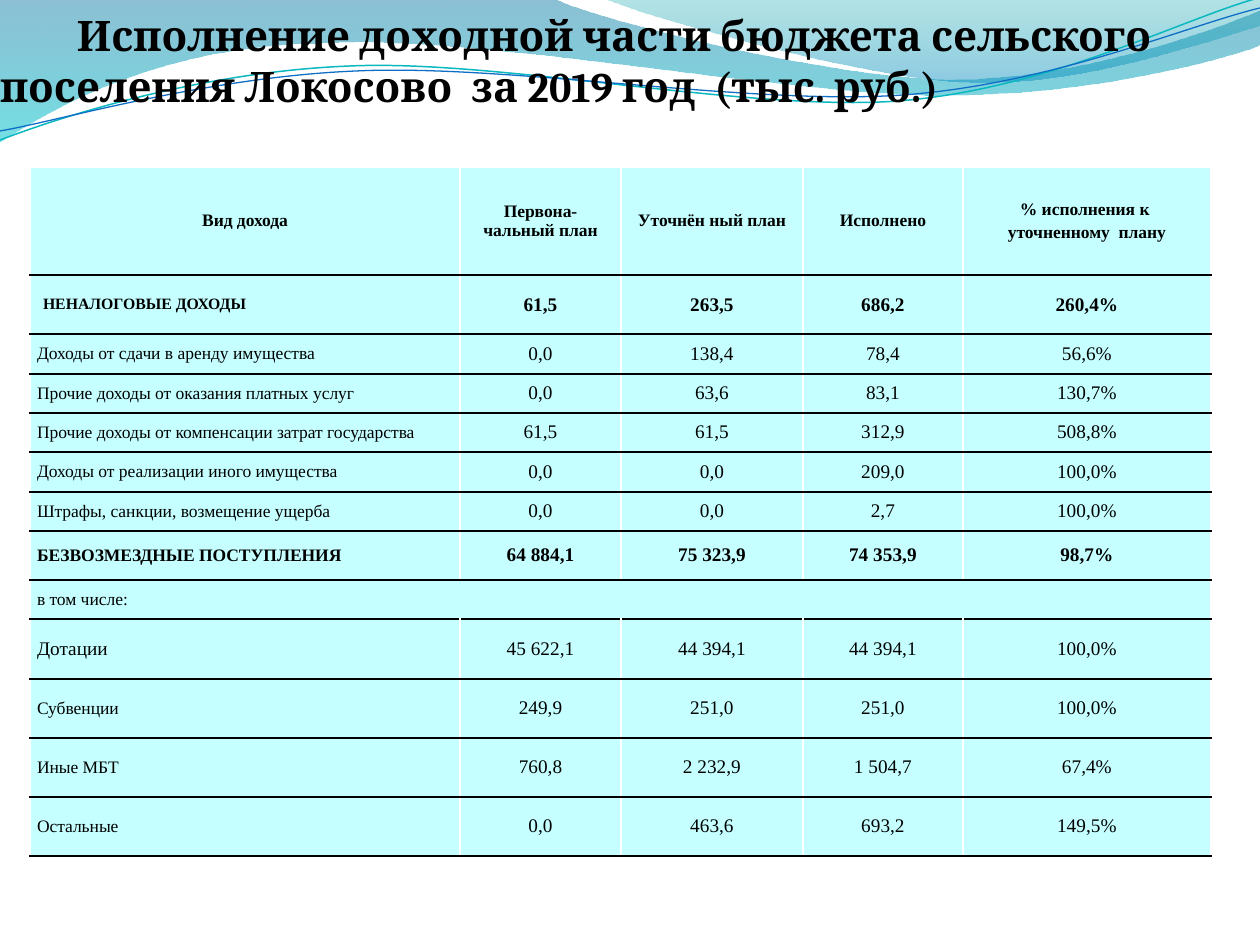
from dataclasses import dataclass

from lxml.etree import SubElement
from pptx import Presentation
from pptx.dml.color import RGBColor
from pptx.enum.text import MSO_ANCHOR, PP_ALIGN
from pptx.oxml.ns import qn
from pptx.util import Emu, Pt


@dataclass(frozen=True)
class Theme:
    black: str = "000000"
    white: str = "FFFFFF"
    cell: str = "C5FFFF"
    title_font: str = "Cambria"
    table_font: str = "Times New Roman"
    title_size: int = 24
    title_line: int = 29
    header_size: int = 10
    value_size: int = 11
    border: int = 1


THEME = Theme()
EMU_PER_PX = 914400 / 126

# Content
TITLE = "Исполнение доходной части бюджета сельского поселения Локосово  за 2019 год  (тыс. руб.)"
HEADERS = [["Вид дохода"], ["Первона-чальный план"], ["Уточнён ный план"], ["Исполнено"],
           ["% исполнения к ", "уточненному  плану"]]
# Height, label size, bold, label, values
ROWS = [
    (59, 9, True, "НЕНАЛОГОВЫЕ ДОХОДЫ", ["61,5", "263,5", "686,2", "260,4%"]),
    (40, 10, False, "Доходы от сдачи в аренду имущества", ["0,0", "138,4", "78,4", "56,6%"]),
    (39, 10, False, "Прочие доходы от оказания платных услуг", ["0,0", "63,6", "83,1", "130,7%"]),
    (39, 10, False, "Прочие доходы от компенсации затрат государства",
     ["61,5", "61,5", "312,9", "508,8%"]),
    (40, 10, False, "Доходы от реализации иного имущества", ["0,0", "0,0", "209,0", "100,0%"]),
    (39, 10, False, "Штрафы, санкции, возмещение ущерба", ["0,0", "0,0", "2,7", "100,0%"]),
    (49, 10, True, "БЕЗВОЗМЕЗДНЫЕ ПОСТУПЛЕНИЯ", ["64 884,1", "75 323,9", "74 353,9", "98,7%"]),
    (39, 10, False, "в том числе:", []),
    (60, 11, False, "Дотации", ["45 622,1", "44 394,1", "44 394,1", "100,0%"]),
    (59, 10, False, "Субвенции", ["249,9", "251,0", "251,0", "100,0%"]),
    (59, 10, False, "Иные МБТ", ["760,8", "2 232,9", "1 504,7", "67,4%"]),
    (59, 10, False, "Остальные", ["0,0", "463,6", "693,2", "149,5%"]),
]
HEADER_HEIGHT = 108
COLUMN_WIDTHS = [430, 161, 182, 160, 248]
TABLE_LEFT, TABLE_TOP = 30, 167
WIDE_INSET, NARROW_INSET = (13, 6), (7, 0)

# Waves: two numbers are a straight step, six are a Bezier curve
FILLED_WAVES = [
    ([(0, 0), (554, -1), (600, 21, 837, 79, 955, 79), (1075, 79, 1207, 33, 1260, 11),
      (1261, 45), (1239, 55, 1096, 96, 940, 95), (784, 95, 481, 35, 324, 43),
      (163, 45, 58, 105, -1, 142)], [("0074A1", 45), ("00C6CF", 55)]),
    ([(604, -1), (641, 15, 859, 78, 969, 82), (1079, 87, 1211, 40, 1260, 26), (1260, 0)],
     [("00A1A9", 30), ("008BBF", 45)]),
]
LINE_WAVES = [
    ([(0, 140), (60, 117, 199, 72, 349, 66), (498, 59, 747, 112, 898, 101),
      (1050, 89, 1182, 19, 1258, -2)], "0AB8BF", 0.85),
    ([(0, 131), (59, 121, 207, 77, 357, 71), (508, 64, 752, 106, 903, 95),
      (1053, 84, 1186, 26, 1260, 8)], "0F6FC6", 0.75),
]


def px(value):
    return Emu(round(value * EMU_PER_PX))


def color(value):
    return RGBColor.from_string(value)


def add_wave(slide, steps, closed):
    """Lay out every control point, then join each group of three into one curve."""
    points = [(px(step[i]), px(step[i + 1])) for step in steps for i in range(0, len(step), 2)]
    builder = slide.shapes.build_freeform(*points[0])
    builder.add_line_segments(points[1:], close=closed)
    shape = builder.convert_to_shape()
    shape.shadow.inherit = False
    segments = iter(list(shape.element.spPr.iter(qn("a:lnTo"))))
    for step in steps[1:]:
        group = [next(segments) for _ in range(len(step) // 2)]
        if len(group) == 3:
            curve = group[0].makeelement(qn("a:cubicBezTo"), {})
            group[0].addprevious(curve)
            for segment in group:
                curve.append(segment[0])
                segment.getparent().remove(segment)
    return shape


def add_filled_wave(slide, steps, stops):
    shape = add_wave(slide, steps, True)
    shape.line.fill.background()
    shape.fill.gradient()
    shape.fill.gradient_angle = 270
    for position, (stop, (value, _)) in enumerate(zip(shape.fill.gradient_stops, stops)):
        stop.color.rgb = color(value)
        stop.position = position
    for node, (_, opacity) in zip(shape.element.spPr.iter(qn("a:srgbClr")), stops):
        SubElement(node, qn("a:alpha"), val=str(opacity * 1000))


def add_line_wave(slide, steps, value, width):
    shape = add_wave(slide, steps, False)
    shape.fill.background()
    shape.line.color.rgb = color(value)
    shape.line.width = Pt(width)


def add_run(paragraph, text, font, size, bold):
    run = paragraph.add_run()
    run.text = text
    run.font.name = font
    run.font.size = Pt(size)
    run.font.bold = bold
    run.font.color.rgb = color(THEME.black)


def add_title(slide):
    frame = slide.shapes.add_textbox(px(0), px(20), px(1229), px(108)).text_frame
    frame.word_wrap = True
    frame.vertical_anchor = MSO_ANCHOR.BOTTOM
    frame.margin_left = frame.margin_right = 0
    frame.margin_top, frame.margin_bottom = px(6), px(17)
    paragraph = frame.paragraphs[0]
    paragraph.line_spacing = Pt(THEME.title_line)
    paragraph._p.get_or_add_pPr().set("indent", str(px(77)))
    add_run(paragraph, TITLE, THEME.title_font, THEME.title_size, True)


def set_borders(cell, top):
    properties = cell._tc.get_or_add_tcPr()
    sides = [("L", THEME.white), ("R", THEME.white), ("T", top), ("B", THEME.black)]
    for index, (side, value) in enumerate(sides):
        line = properties.makeelement(qn(f"a:ln{side}"), {"w": str(Pt(THEME.border))})
        SubElement(SubElement(line, qn("a:solidFill")), qn("a:srgbClr"), val=value)
        properties.insert(index, line)


def fill_cell(cell, lines, size, bold, inset, alignment, top=THEME.black):
    cell.fill.solid()
    cell.fill.fore_color.rgb = color(THEME.cell)
    cell.vertical_anchor = MSO_ANCHOR.MIDDLE
    cell.margin_left = cell.margin_right = px(inset[0])
    cell.margin_top = cell.margin_bottom = px(inset[1])
    set_borders(cell, top)
    for index, text in enumerate(lines):
        frame = cell.text_frame
        paragraph = frame.add_paragraph() if index else frame.paragraphs[0]
        paragraph.alignment = alignment
        paragraph.space_before = Pt(2 if index else 0)
        add_run(paragraph, text, THEME.table_font, size, bold)


def add_income_table(slide):
    heights = [HEADER_HEIGHT] + [row[0] for row in ROWS]
    table = slide.shapes.add_table(len(heights), len(COLUMN_WIDTHS), px(TABLE_LEFT), px(TABLE_TOP),
                                   px(sum(COLUMN_WIDTHS)), px(sum(heights))).table
    table.first_row = table.horz_banding = False
    for column, width in zip(table.columns, COLUMN_WIDTHS):
        column.width = px(width)
    for row, height in zip(table.rows, heights):
        row.height = px(height)

    for column, lines in enumerate(HEADERS):
        fill_cell(table.cell(0, column), lines, THEME.header_size, True, WIDE_INSET,
                  PP_ALIGN.CENTER, THEME.white)
    for row, (_, label_size, bold, label, values) in enumerate(ROWS, 1):
        inset = WIDE_INSET if row == 1 else NARROW_INSET
        fill_cell(table.cell(row, 0), [label], label_size, bold, inset, PP_ALIGN.LEFT)
        for column in range(1, len(COLUMN_WIDTHS)):
            fill_cell(table.cell(row, column), values[column - 1:column], THEME.value_size, bold,
                      inset, PP_ALIGN.CENTER)
        if not values:
            table.cell(row, 0).merge(table.cell(row, len(COLUMN_WIDTHS) - 1))


def main():
    presentation = Presentation()
    presentation.slide_width, presentation.slide_height = px(1260), px(945)
    slide = presentation.slides.add_slide(presentation.slide_layouts[6])
    # Background waves
    for wave in FILLED_WAVES:
        add_filled_wave(slide, *wave)
    for wave in LINE_WAVES:
        add_line_wave(slide, *wave)
    # Title and table
    add_title(slide)
    add_income_table(slide)
    presentation.save("out.pptx")


if __name__ == "__main__":
    main()
